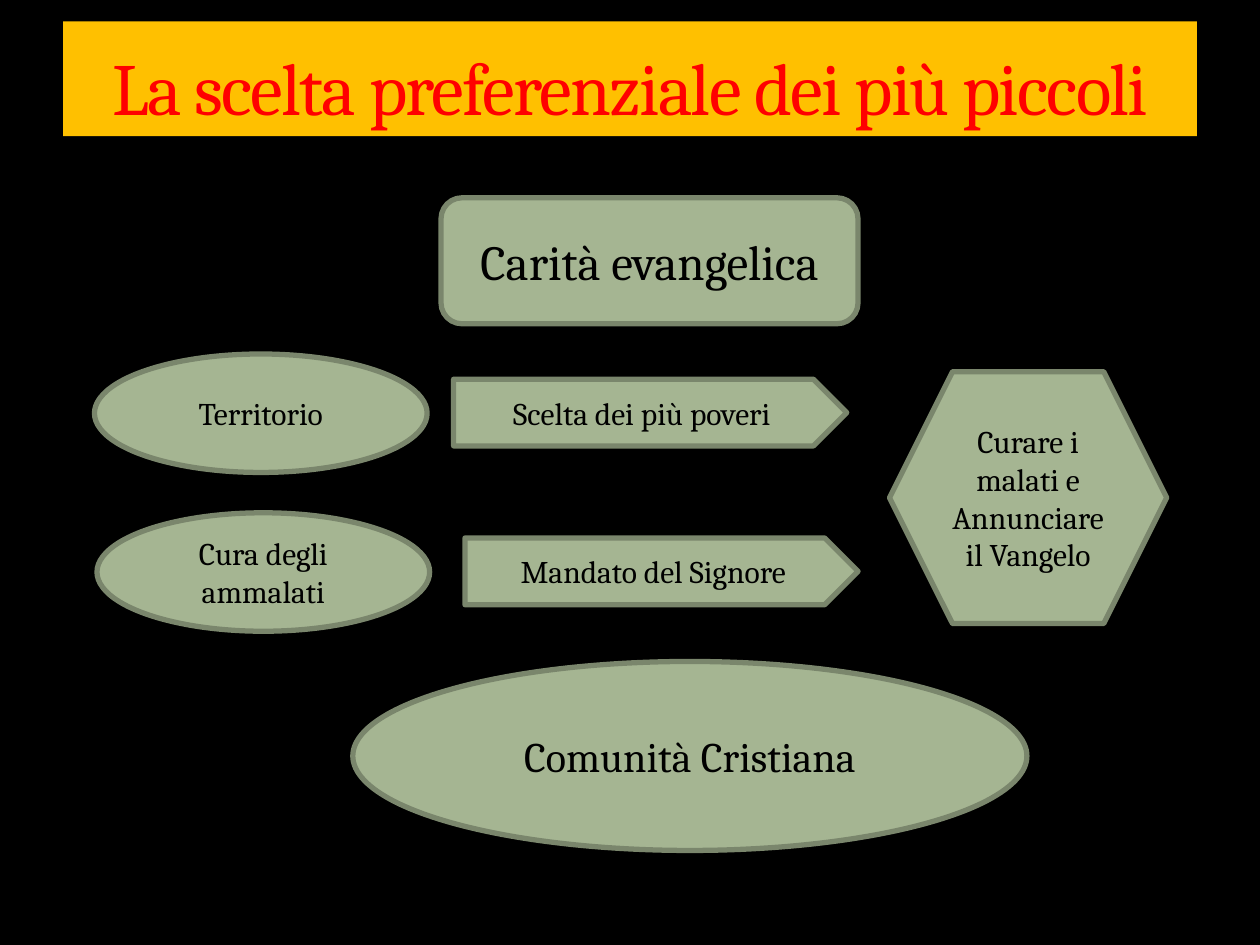
from dataclasses import dataclass

from pptx import Presentation
from pptx.dml.color import RGBColor
from pptx.enum.shapes import MSO_SHAPE
from pptx.enum.text import MSO_ANCHOR, MSO_AUTO_SIZE, PP_ALIGN
from pptx.util import Inches, Pt


@dataclass(frozen=True)
class Theme:
    """Colours, font and type sizes of the slide."""
    font: str = "Cambria"
    background: str = "000000"
    banner: str = "FFC000"
    title: str = "FF0000"
    fill: str = "A5B592"
    outline: str = "7A866C"
    text: str = "000000"
    title_size: int = 42
    heading_size: int = 28
    base_size: int = 24
    body_size: int = 18
    outline_width: int = 3
    title_spacing: int = -100


THEME = Theme()


def paint(fill, colour):
    """Give a fill one solid colour."""
    fill.solid()
    fill.fore_color.rgb = RGBColor.from_string(colour)


def write(box, text, size, colour, anchor):
    """Write one centred run into a shape and return the run."""
    frame = box.text_frame
    frame.word_wrap = True
    frame.auto_size = MSO_AUTO_SIZE.NONE
    frame.vertical_anchor = anchor
    para = frame.paragraphs[0]
    para.alignment = PP_ALIGN.CENTER
    span = para.add_run()
    span.text = text
    span.font.name = THEME.font
    span.font.size = Pt(size)
    span.font.color.rgb = RGBColor.from_string(colour)
    return span


def add_title(page, text):
    """Place the title in its coloured banner."""
    box = page.shapes.title
    box.left, box.top = Inches(0.5), Inches(0.17)
    box.width, box.height = Inches(9), Inches(0.91)
    paint(box.fill, THEME.banner)
    span = write(box, text, THEME.title_size, THEME.title, MSO_ANCHOR.BOTTOM)
    span.font._element.set("spc", str(THEME.title_spacing))


def add_concept(page, kind, place, text, size=THEME.body_size):
    """Add an outlined shape that names one concept."""
    box = page.shapes.add_shape(kind, *(Inches(length) for length in place))
    box.shadow.inherit = False
    paint(box.fill, THEME.fill)
    paint(box.line.fill, THEME.outline)
    box.line.width = Pt(THEME.outline_width)
    write(box, text, size, THEME.text, MSO_ANCHOR.MIDDLE)


def add_step(page, left, top, source, arrow_left, choice):
    """Add an ellipse and the arrow that leads on from it."""
    add_concept(page, MSO_SHAPE.OVAL, (left, top, 2.64, 0.94), source)
    add_concept(page, MSO_SHAPE.PENTAGON,
                (arrow_left, top + 0.2, 3.12, 0.53), choice)


def main():
    """Build the slide and save the deck."""
    deck = Presentation()
    deck.slide_width, deck.slide_height = Inches(10), Inches(7.5)
    page = deck.slides.add_slide(deck.slide_layouts.get_by_name("Title Only"))
    paint(page.background.fill, THEME.background)

    add_title(page, "La scelta preferenziale dei più piccoli")
    add_concept(page, MSO_SHAPE.FLOWCHART_ALTERNATE_PROCESS,
                (3.5, 1.57, 3.31, 1), "Carità evangelica", THEME.heading_size)
    add_step(page, 0.75, 2.81, "Territorio", 3.6, "Scelta dei più poveri")
    add_step(page, 0.77, 4.07, "Cura degli ammalati", 3.69, "Mandato del Signore")
    add_concept(page, MSO_SHAPE.HEXAGON, (7.06, 2.95, 2.2, 2),
                "Curare i malati e Annunciare il Vangelo")
    add_concept(page, MSO_SHAPE.OVAL, (2.8, 5.25, 5.35, 1.5),
                "Comunità Cristiana", THEME.base_size)
    deck.save("out.pptx")


if __name__ == "__main__":
    main()
